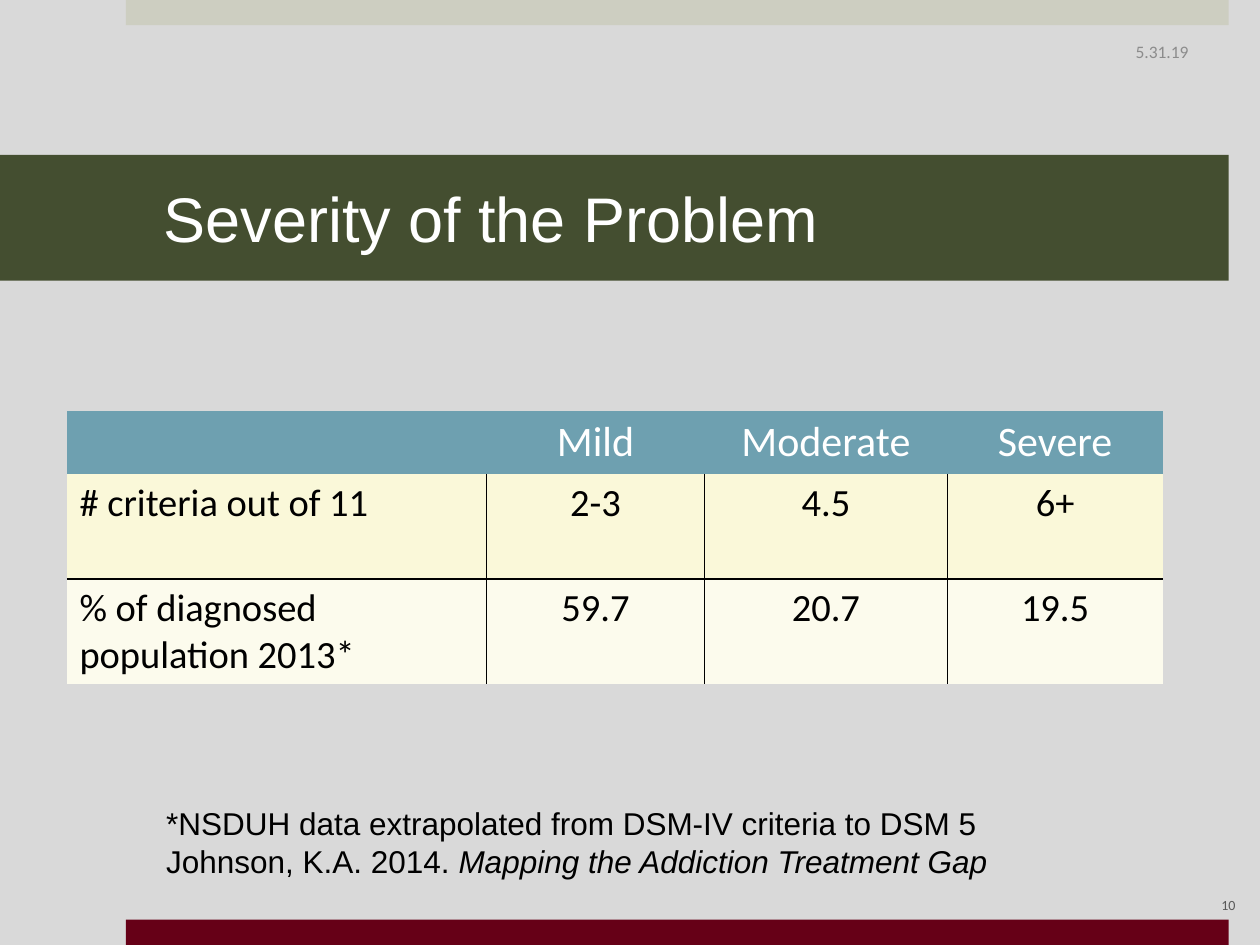
from lxml import etree
from pptx import Presentation
from pptx.dml.color import RGBColor
from pptx.enum.shapes import MSO_SHAPE
from pptx.enum.text import MSO_ANCHOR, MSO_AUTO_SIZE, PP_ALIGN
from pptx.oxml.ns import qn
from pptx.util import Cm, Pt

RECTANGLE = MSO_SHAPE.RECTANGLE
MIDDLE = MSO_ANCHOR.MIDDLE
NO_FIT = MSO_AUTO_SIZE.NONE
LEFT, CENTER, RIGHT = PP_ALIGN.LEFT, PP_ALIGN.CENTER, PP_ALIGN.RIGHT

TITLE = "Severity of the Problem"
DATE = "5.31.19"
PAGE_NUMBER = "10"
ROWS = [
    ["", "Mild", "Moderate", "Severe"],
    ["# criteria out of 11", "2-3", "4.5", "6+"],
    ["% of diagnosed population 2013*", "59.7", "20.7", "19.5"],
]
# Each paragraph is a list of (text, italic) spans.
SOURCE_NOTE = [
    [("*NSDUH data extrapolated from DSM-IV criteria to DSM 5", False)],
    [("Johnson, K.A. 2014. ", False), ("Mapping the Addiction Treatment Gap", True)],
]

BANDS = [(0, "CDCEC1"), (18.54, "660017")]  # top in cm, colour
COLUMN_WIDTHS = [8.46, 4.39, 4.9, 4.34]
ROW_HEIGHTS = [1.27, 2.12, 2.12]
ROW_FILLS = ["6EA0B0", "FAF8D9", "FCFBED"]


def color(hex_text):
    return RGBColor.from_string(hex_text)


def paint(shape_or_cell, hex_text):
    shape_or_cell.fill.solid()
    shape_or_cell.fill.fore_color.rgb = color(hex_text)


def add_span(para, text, size, font, hex_text, italic=False):
    span = para.add_run()
    span.text = text
    span.font.size = Pt(size)
    span.font.name = font
    span.font.bold = False
    span.font.italic = italic
    span.font.color.rgb = color(hex_text)


def add_box(page, left, top, width, height):
    box = page.shapes.add_textbox(Cm(left), Cm(top), Cm(width), Cm(height))
    box.text_frame.word_wrap = True
    return box.text_frame


def add_label(page, place, text, size, hex_text, align):
    frame = add_box(page, *place)
    frame.vertical_anchor = MIDDLE
    para = frame.paragraphs[0]
    para.alignment = align
    add_span(para, text, size, "Calibri", hex_text)


def set_borders(cell, visible):
    """Draw the named sides (L, R, T, B) in black and hide the others."""
    properties = cell._tc.get_or_add_tcPr()
    for side in "LRTB":
        line = etree.SubElement(properties, qn("a:ln" + side), w=str(Pt(0.75)))
        if side in visible:
            fill = etree.SubElement(line, qn("a:solidFill"))
            etree.SubElement(fill, qn("a:srgbClr"), val="000000")
        else:
            etree.SubElement(line, qn("a:noFill"))


def inner_sides(row, column):
    """Sides of a body cell that touch another body cell."""
    sides = "B" if row < len(ROWS) - 1 else "T"
    if column > 0:
        sides += "L"
    if column < len(COLUMN_WIDTHS) - 1:
        sides += "R"
    return sides


def add_bands(page):
    for top, hex_text in BANDS:
        band = page.shapes.add_shape(RECTANGLE, Cm(2.54), Cm(top), Cm(22.23), Cm(0.51))
        band.shadow.inherit = False
        band.line.fill.background()
        paint(band, hex_text)


def add_title(page):
    title = page.shapes.title
    title.left, title.top = Cm(0), Cm(3.12)
    title.width, title.height = Cm(24.77), Cm(2.54)
    paint(title, "444E30")
    frame = title.text_frame
    frame.margin_left, frame.margin_right = Cm(3.3), Cm(0.76)
    frame.vertical_anchor = MIDDLE
    frame.auto_size = NO_FIT
    para = frame.paragraphs[0]
    para.alignment = LEFT
    add_span(para, TITLE, 36, "Arial", "FFFFFF")


def add_severity_table(page):
    table = page.shapes.add_table(
        len(ROWS), len(COLUMN_WIDTHS), Cm(1.35), Cm(8.28),
        Cm(sum(COLUMN_WIDTHS)), Cm(sum(ROW_HEIGHTS))).table
    for column, width in enumerate(COLUMN_WIDTHS):
        table.columns[column].width = Cm(width)
    for row, texts in enumerate(ROWS):
        table.rows[row].height = Cm(ROW_HEIGHTS[row])
        header = row == 0
        size, hex_text = (24, "FFFFFF") if header else (22, "000000")
        for column, text in enumerate(texts):
            cell = table.cell(row, column)
            set_borders(cell, "" if header else inner_sides(row, column))
            paint(cell, ROW_FILLS[row])
            para = cell.text_frame.paragraphs[0]
            para.alignment = CENTER if column else LEFT
            if text:
                add_span(para, text, size, "Calibri", hex_text)


def add_source_note(page):
    frame = add_box(page, 3.1, 16.08, 18.36, 1.8)
    frame.word_wrap = False
    for number, spans in enumerate(SOURCE_NOTE):
        para = frame.add_paragraph() if number else frame.paragraphs[0]
        for text, italic in spans:
            add_span(para, text, 18, "Arial", "000000", italic)


def main():
    deck = Presentation()
    deck.slide_width, deck.slide_height = Cm(25.4), Cm(19.05)
    page = deck.slides.add_slide(deck.slide_layouts[5])
    paint(page.background, "D9D9D9")
    add_bands(page)
    add_title(page)
    add_label(page, (23.19, 17.73, 3.15, 1.02), PAGE_NUMBER, 8, "595959", CENTER)
    add_source_note(page)
    add_label(page, (18.29, 0.53, 5.92, 1.02), DATE, 10, "8C8C8C", RIGHT)
    add_severity_table(page)
    deck.save("out.pptx")


if __name__ == "__main__":
    main()
